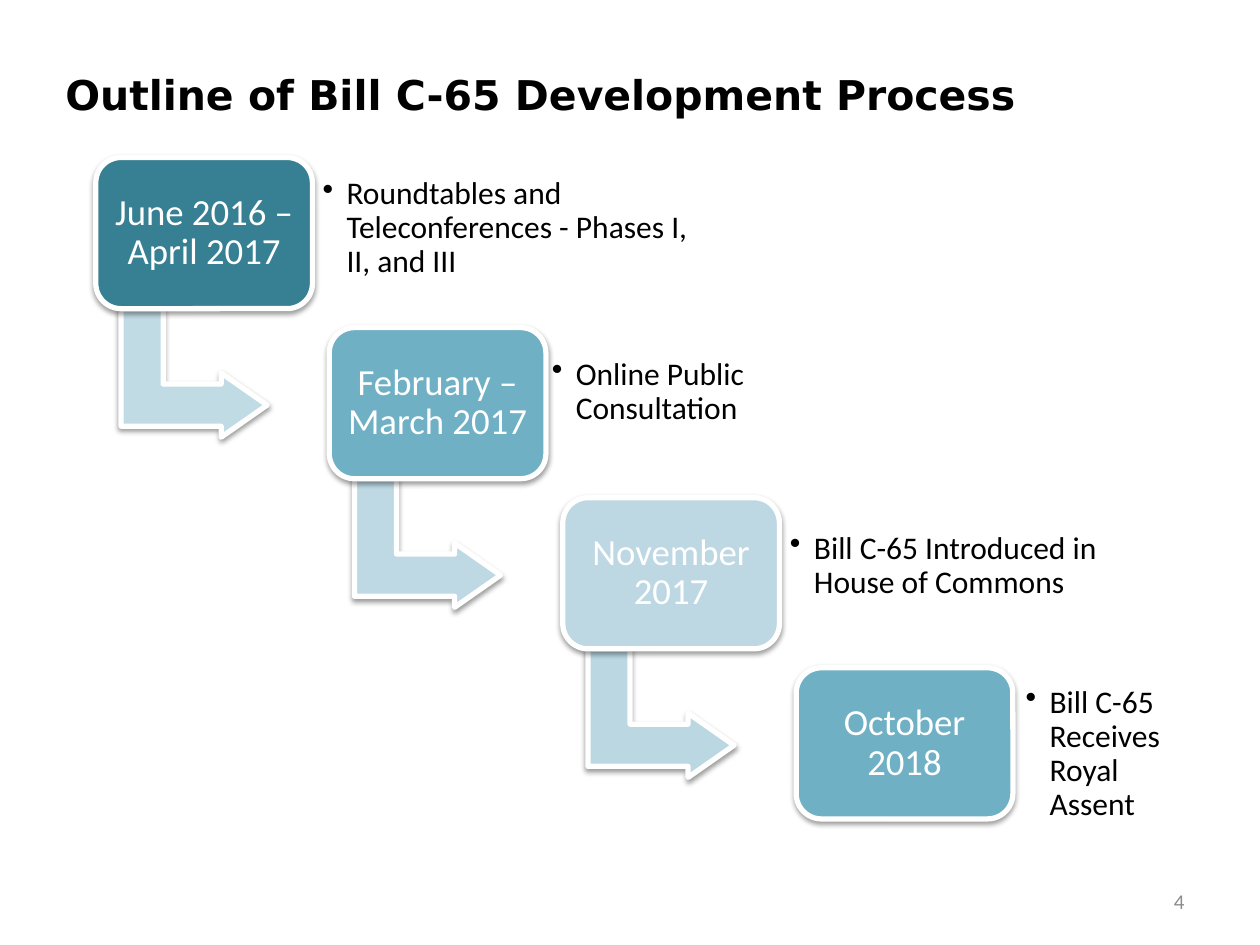
from dataclasses import dataclass

from lxml import etree
from pptx import Presentation
from pptx.dml.color import RGBColor
from pptx.enum.shapes import MSO_SHAPE
from pptx.enum.text import MSO_ANCHOR, PP_ALIGN
from pptx.oxml.ns import qn
from pptx.slide import Slide
from pptx.util import Inches, Pt

ROUNDED = MSO_SHAPE.ROUNDED_RECTANGLE
BENT_ARROW = MSO_SHAPE.BENT_UP_ARROW
MIDDLE = MSO_ANCHOR.MIDDLE
LEFT, CENTER, RIGHT = PP_ALIGN.LEFT, PP_ALIGN.CENTER, PP_ALIGN.RIGHT

COLORS = {
    "black": "000000", "white": "FFFFFF", "gray": "8C8C8C",
    "teal": "377F92", "blue": "70B0C5", "pale": "BED8E3",
    "arrow1": "C1DBE5", "arrow2": "BED9E3", "arrow3": "BAD7E2",
}

STEPS = [
    ("June 2016 – April 2017", "teal", "arrow1",
     "Roundtables and Teleconferences - Phases I, II, and III", (2.49, 1.33, 3.05, 0.97)),
    ("February – March 2017", "blue", "arrow2",
     "Online Public Consultation", (4.31, 2.63, 1.94, 0.97)),
    ("November 2017", "pale", "arrow3",
     "Bill C-65 Introduced in House of Commons", (6.2, 4.01, 3.14, 0.97)),
    ("October 2018", "blue", None,
     "Bill C-65 Receives Royal Assent", (8.07, 5.5, 1.25, 0.97)),
]
STEP_RIGHT, STEP_DOWN = 1.853, 1.35


def color(name):
    return RGBColor.from_string(COLORS[name])


def write_text(shape, text, font="Calibri", size=18, ink="black", bold=False,
               align=LEFT, inset=None, spacing=None, bullet=False):
    frame = shape.text_frame
    frame.word_wrap = True
    frame.vertical_anchor = MIDDLE
    if inset is not None:
        frame.margin_left = frame.margin_right = Inches(inset)
        frame.margin_top = frame.margin_bottom = Inches(inset)
    para = frame.paragraphs[0]
    para.alignment = align
    if spacing:
        para.line_spacing = spacing
    if bullet:
        properties = para._p.get_or_add_pPr()
        properties.set("marL", str(Inches(0.19)))
        properties.set("indent", str(-Inches(0.19)))
        etree.SubElement(properties, qn("a:buChar"), char="•")
    span = para.add_run()
    span.text = text
    span.font.name = font
    span.font.size = Pt(size)
    span.font.bold = bold
    span.font.color.rgb = color(ink)


@dataclass
class ProcessPage:
    """Draws the elements of a stepped process on one slide."""
    page: Slide
    outline: float = 3

    def text(self, place, text, **style):
        box = self.page.shapes.add_textbox(*map(Inches, place))
        write_text(box, text, **style)

    def shape(self, kind, place, fill, adjustments):
        shape = self.page.shapes.add_shape(kind, *map(Inches, place))
        for index, value in enumerate(adjustments):
            shape.adjustments[index] = value
        shape.fill.solid()
        shape.fill.fore_color.rgb = color(fill)
        shape.line.color.rgb = color("white")
        shape.line.width = Pt(self.outline)
        self.shadow(shape)
        return shape

    def shadow(self, shape):
        shape.shadow.inherit = False
        effects = shape._element.spPr.find(qn("a:effectLst"))
        outer = etree.SubElement(
            effects, qn("a:outerShdw"), blurRad=str(Pt(3.1)), dist=str(Pt(1.6)),
            dir="5400000", rotWithShape="0")
        tint = etree.SubElement(outer, qn("a:srgbClr"), val=COLORS["black"])
        etree.SubElement(tint, qn("a:alpha"), val="38000")

    def arrow(self, left, top, fill):
        arrow = self.shape(BENT_ARROW, (left, top, 1.02, 1.16), fill, (0.328, 0.25, 0.358))
        arrow.rotation = 90

    def date(self, left, top, text, fill):
        date = self.shape(ROUNDED, (left, top, 1.72, 1.2), fill, (0.167,))
        write_text(date, text, size=21, ink="white", align=CENTER, inset=0.09, spacing=0.9)


def main():
    deck = Presentation()
    deck.slide_width, deck.slide_height = Inches(10), Inches(7.5)
    process = ProcessPage(deck.slides.add_slide(deck.slide_layouts[6]))
    process.text((7.17, 6.95, 2.33, 0.4), "4", size=12, ink="gray", align=RIGHT)
    process.text((0.42, 0.29, 9.08, 0.92), "Outline of Bill C-65 Development Process",
                 font="DejaVu Sans", size=23.4, bold=True)
    for index, (date, fill, arrow_fill, event, event_place) in enumerate(STEPS):
        left, top = 0.76 + index * STEP_RIGHT, 1.25 + index * STEP_DOWN
        if arrow_fill:
            process.arrow(left + 0.27, top + 1.13, arrow_fill)
        process.date(left, top, date, fill)
        process.text(event_place, event, inset=0.07, spacing=0.9, bullet=True)
    deck.save("out.pptx")


if __name__ == "__main__":
    main()
